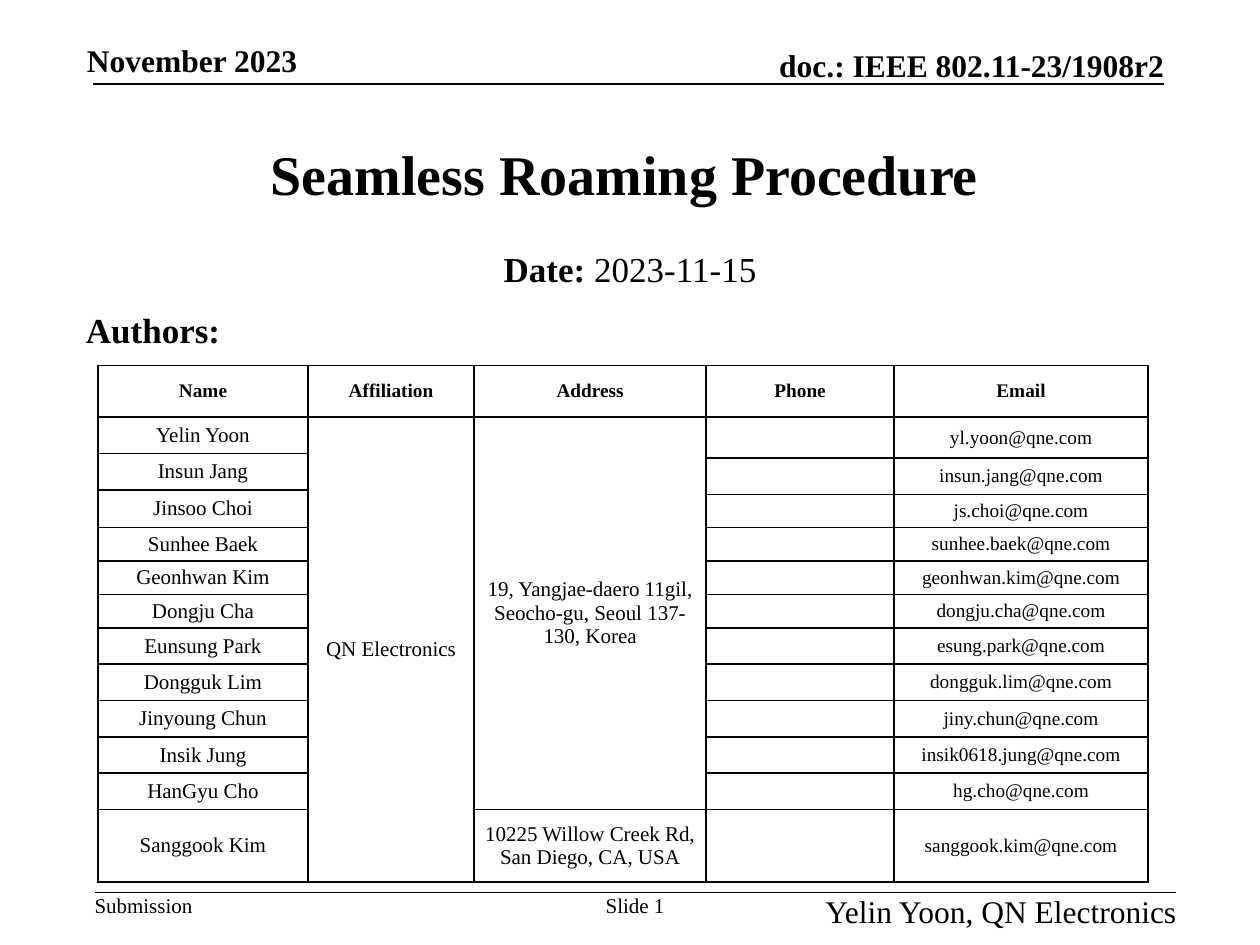
from lxml import etree
from pptx import Presentation
from pptx.dml.color import RGBColor
from pptx.enum.shapes import MSO_CONNECTOR
from pptx.enum.text import MSO_ANCHOR, MSO_AUTO_SIZE, PP_ALIGN
from pptx.oxml.ns import qn
from pptx.util import Pt

LEFT, CENTER, RIGHT = PP_ALIGN.LEFT, PP_ALIGN.CENTER, PP_ALIGN.RIGHT
TOP, MIDDLE, BOTTOM = MSO_ANCHOR.TOP, MSO_ANCHOR.MIDDLE, MSO_ANCHOR.BOTTOM
GROW, FIXED = MSO_AUTO_SIZE.SHAPE_TO_FIT_TEXT, MSO_AUTO_SIZE.NONE
STRAIGHT = MSO_CONNECTOR.STRAIGHT
COLORS = {"ink": "000000", "page": "FFFFFF"}
FONT = "Times New Roman"


def style_font(font, size, bold=False):
    for name, value in {"name": FONT, "size": Pt(size), "bold": bold}.items():
        setattr(font, name, value)
    font.color.rgb = RGBColor.from_string(COLORS["ink"])


def add_border(cell, side):
    line = etree.SubElement(cell._tc.get_or_add_tcPr(), qn(f"a:{side}"), w=str(Pt(1)))
    fill = etree.SubElement(line, qn("a:solidFill"))
    etree.SubElement(fill, qn("a:srgbClr"), val=COLORS["ink"])


deck = Presentation()
deck.slide_width, deck.slide_height = Pt(720), Pt(540)
page = deck.slides.add_slide(deck.slide_layouts[6])
page.background.fill.solid()
page.background.fill.fore_color.rgb = RGBColor.from_string(COLORS["page"])

# Header and footer rules
for left, right, height in [(53.3, 665.3, 48), (54, 672, 510)]:
    rule = page.shapes.add_connector(STRAIGHT, Pt(left), Pt(height), Pt(right), Pt(height))
    rule.line.width = Pt(1)
    rule.line.color.rgb = RGBColor.from_string(COLORS["ink"])
    etree.SubElement(rule._element.spPr, qn("a:effectLst"))

# Text: place, alignment, anchor, size, padded, spans of (text, bold)
texts = [
    ((405.3, 26.5, 260, 21.6), RIGHT, BOTTOM, 18, False, [("doc.: IEEE 802.11-23/1908r2", True)]),
    ((49.7, 23.5, 121.7, 21.6), LEFT, BOTTOM, 18, False, [("November 2023", True)]),
    ((54, 510, 56.2, 14.4), LEFT, TOP, 12, False, [("Submission", False)]),
    ((462, 510, 210.4, 21.6), RIGHT, TOP, 18, False, [("Yelin Yoon, QN Electronics", False)]),
    ((342, 510, 41.8, 14.4), CENTER, TOP, 12, False, [("Slide 1", False)]),
    ((30, 54, 654, 90), CENTER, MIDDLE, 32, True, [("Seamless Roaming Procedure", True)]),
    ((54, 138, 612, 30), CENTER, TOP, 20, True, [("Date: ", True), ("2023-11-15", False)]),
    ((42, 173, 114, 30), LEFT, TOP, 20, True, [("Authors:", True)]),
]
for place, align, anchor, size, padded, spans in texts:
    box = page.shapes.add_textbox(*map(Pt, place))
    side, edge = (7.2, 3.6) if padded else (0, 0)
    frame_format = {
        "word_wrap": padded, "auto_size": FIXED if padded else GROW, "vertical_anchor": anchor,
        "margin_left": Pt(side), "margin_right": Pt(side),
        "margin_top": Pt(edge), "margin_bottom": Pt(edge),
    }
    for name, value in frame_format.items():
        setattr(box.text_frame, name, value)
    para = box.text_frame.paragraphs[0]
    para.alignment = align
    for text, bold in spans:
        span = para.add_run()
        span.text = text
        style_font(span.font, size, bold)

# Author table
headings = ["Name", "Affiliation", "Address", "Phone", "Email"]
authors = [
    ("Yelin Yoon", "yl.yoon"), ("Insun Jang", "insun.jang"), ("Jinsoo Choi", "js.choi"),
    ("Sunhee Baek", "sunhee.baek"), ("Geonhwan Kim", "geonhwan.kim"),
    ("Dongju Cha", "dongju.cha"), ("Eunsung Park", "esung.park"),
    ("Dongguk Lim", "dongguk.lim"), ("Jinyoung Chun", "jiny.chun"),
    ("Insik Jung", "insik0618.jung"), ("HanGyu Cho", "hg.cho"),
    ("Sanggook Kim", "sanggook.kim"),
]
widths = [120, 95, 132.5, 107.5, 145]
heights = [29.5, 20.75, 2.8, 18.1, 2.6] + [19.1] * 4 + [20.75] * 5 + [41.4]
table = page.shapes.add_table(
    len(heights), len(widths), Pt(56), Pt(208.8), Pt(sum(widths)), Pt(sum(heights))
).table
table.first_row = table.horz_banding = False
for column, width in zip(table.columns, widths):
    column.width = Pt(width)
for row, height in zip(table.rows, heights):
    row.height = Pt(height)

# Name and email rows are split at slightly different heights
name_rows = [1, 2, 4, *range(6, 15)]
email_rows = [1, 3, *range(5, 15)]
merges = [(1, 1, 14), (2, 1, 13), (0, 2, 3), (0, 4, 5)]
merges += [(column, first, first + 1) for column in (3, 4) for first in (1, 3)]
for column, first, last in merges:
    table.cell(first, column).merge(table.cell(last, column))

contents = {(0, column): heading for column, heading in enumerate(headings)}
contents[1, 1] = "QN Electronics"
contents[1, 2] = "19, Yangjae-daero 11gil, Seocho-gu, Seoul 137-130, Korea"
contents[14, 2] = "10225 Willow Creek Rd, San Diego, CA, USA"
for (author, mailbox), name_row, email_row in zip(authors, name_rows, email_rows):
    contents[name_row, 0] = author
    contents[email_row, 4] = f"{mailbox}@qne.com"

for row in range(len(heights)):
    for column in range(len(widths)):
        cell = table.cell(row, column)
        for side in ("lnL", "lnR", "lnT", "lnB"):
            add_border(cell, side)
        cell.fill.background()
        cell.vertical_anchor = MIDDLE
        if row > 0:
            cell.margin_left = cell.margin_right = Pt(5)
            cell.margin_top = cell.margin_bottom = Pt(0)
        para = cell.text_frame.paragraphs[0]
        para.alignment = CENTER
        size = 11 if row == 0 or column == 4 else 12
        if (row, column) in contents:
            span = para.add_run()
            span.text = contents[row, column]
            style_font(span.font, size, row == 0)
        else:
            para.font.size = Pt(size)

deck.save("out.pptx")
